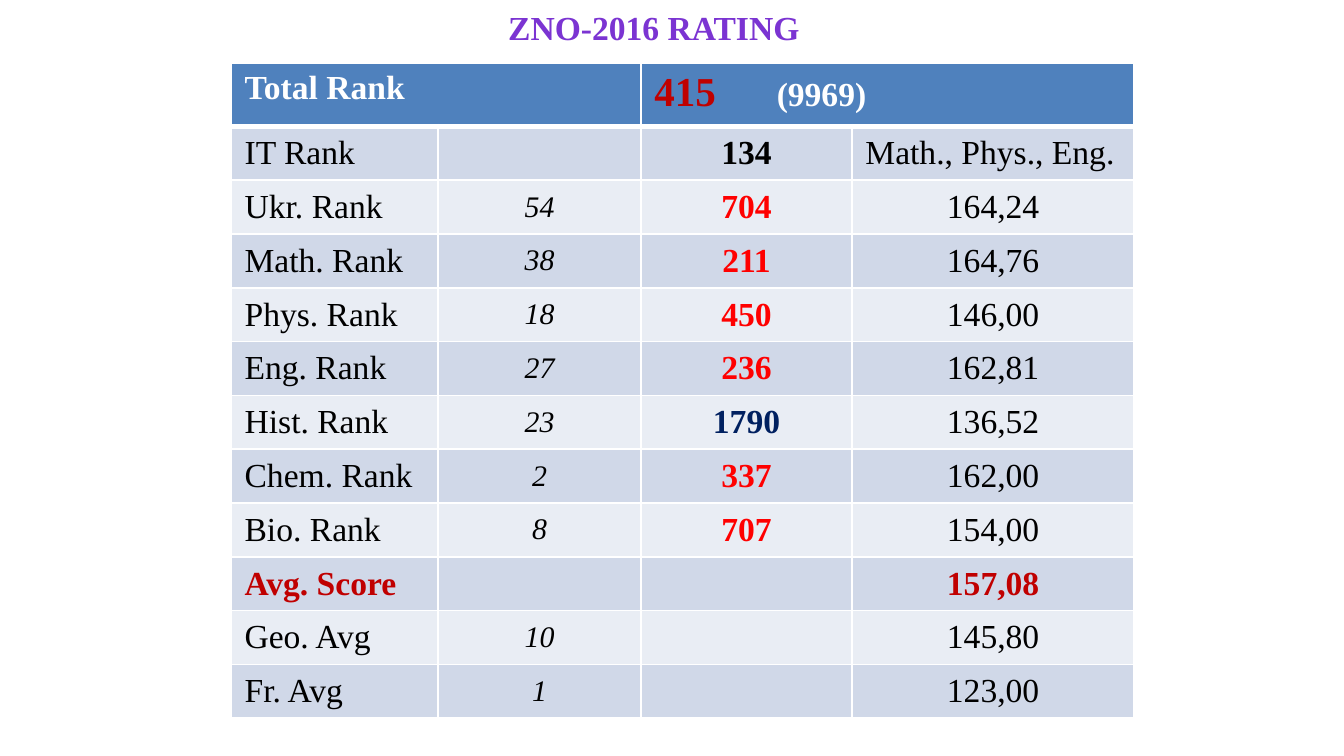
"""Build the ZNO-2016 rating slide with its table of ranks and scores."""
from lxml import etree
from pptx import Presentation, util as u
from pptx.dml.color import RGBColor
from pptx.enum import text
from pptx.oxml import ns

FONT = "Times New Roman"
WHITE, BLACK, RED, DARK_RED, NAVY = "FFFFFF", "000000", "FF0000", "C00000", "002060"
PURPLE, HEADER_FILL, BANDS = "7B34D2", "4F81BD", ("D0D8E8", "E9EDF4")
LEFT, CENTER = text.PP_ALIGN.LEFT, text.PP_ALIGN.CENTER

TITLE = "ZNO-2016 RATING"
HEADER = "Total Rank"
TOTAL = (("415", 22, DARK_RED), ("\t(9969)", 18, WHITE))
ROWS = [
    ("IT Rank", "", "134", "Math., Phys., Eng."),
    ("Ukr. Rank", "54", "704", "164,24"),
    ("Math. Rank", "38", "211", "164,76"),
    ("Phys. Rank", "18", "450", "146,00"),
    ("Eng. Rank", "27", "236", "162,81"),
    ("Hist. Rank", "23", "1790", "136,52"),
    ("Chem. Rank", "2", "337", "162,00"),
    ("Bio. Rank", "8", "707", "154,00"),
    ("Avg. Score", "", "", "157,08"),
    ("Geo. Avg", "10", "", "145,80"),
    ("Fr. Avg", "1", "", "123,00"),
]
RANK_COLORS = {"IT Rank": BLACK, "Hist. Rank": NAVY}
COLUMN_WIDTHS = (1.54, 1.51, 1.57, 2.1)
HEADER_HEIGHT, ROW_HEIGHT = 0.47, 0.4
TAB_STOP = 0.91


def color(value):
    """Return the colour for a hex string."""
    return RGBColor.from_string(value)


def style_font(font, size, font_color, bold=False, italic=False):
    """Set every property of a font."""
    font.name, font.size = FONT, u.Pt(size)
    font.bold, font.italic = bold, italic
    font.color.rgb = color(font_color)


def write(frame, words, alignment, *style):
    """Put one uniformly styled paragraph in a text frame."""
    paragraph = frame.paragraphs[0]
    paragraph.alignment = alignment
    style_font(paragraph.font, *style)
    if words:
        paragraph.add_run().text = words


def set_borders(cell, top, bottom):
    """Draw white borders of the given top and bottom widths around a cell."""
    properties = cell._tc.get_or_add_tcPr()
    widths = {"lnL": 1, "lnR": 1, "lnT": top, "lnB": bottom}
    for position, (side, width) in enumerate(widths.items()):
        line = etree.Element(ns.qn(f"a:{side}"), w=str(u.Pt(width)))
        fill = etree.SubElement(line, ns.qn("a:solidFill"))
        etree.SubElement(fill, ns.qn("a:srgbClr"), val=WHITE)
        properties.insert(position, line)


def fill_header(table):
    """Merge and write the two header cells."""
    for first in (0, 2):
        table.cell(0, first).merge(table.cell(0, first + 1))
    write(table.cell(0, 0).text_frame, HEADER, LEFT, 18, WHITE, True)
    paragraph = table.cell(0, 2).text_frame.paragraphs[0]
    tabs = etree.SubElement(paragraph._p.get_or_add_pPr(), ns.qn("a:tabLst"))
    etree.SubElement(tabs, ns.qn("a:tab"), pos=str(u.Inches(TAB_STOP)), algn="l")
    for words, size, font_color in TOTAL:
        run = paragraph.add_run()
        run.text = words
        style_font(run.font, size, font_color, True)


def fill_row(table, index, values):
    """Write one row of rank, count, place and score."""
    label = values[0]
    average = label == "Avg. Score"
    plain = (18, DARK_RED if average else BLACK, average)
    styles = (plain, (16, BLACK, False, True),
              (18, RANK_COLORS.get(label, RED), True), plain)
    for column, (words, style) in enumerate(zip(values, styles)):
        cell = table.cell(index, column)
        cell.vertical_anchor = text.MSO_ANCHOR.MIDDLE
        left = column == 0 or label == "IT Rank" and column == 3
        write(cell.text_frame, words, LEFT if left else CENTER, *style)


def main():
    """Build and save the slide."""
    presentation = Presentation()
    presentation.slide_width = u.Inches(10)
    presentation.slide_height = presentation.slide_width * 9 // 16
    slide = presentation.slides.add_slide(presentation.slide_layouts[6])

    title = slide.shapes.add_textbox(*map(u.Inches, (3.67, 0, 2.39, 0.4)))
    title.text_frame.word_wrap = False
    write(title.text_frame, TITLE, CENTER, 18, PURPLE, True)

    height = HEADER_HEIGHT + ROW_HEIGHT * len(ROWS)
    frame = slide.shapes.add_table(
        len(ROWS) + 1, len(COLUMN_WIDTHS),
        *map(u.Inches, (1.72, 0.47, sum(COLUMN_WIDTHS), height)))
    table = frame.table
    table.first_row = table.horz_banding = False
    for column, width in zip(table.columns, COLUMN_WIDTHS):
        column.width = u.Inches(width)
    for index, row in enumerate(table.rows):
        row.height = u.Inches(ROW_HEIGHT if index else HEADER_HEIGHT)
        for cell in row.cells:
            cell.fill.solid()
            cell.fill.fore_color.rgb = color(BANDS[(index - 1) % 2] if index else HEADER_FILL)
            set_borders(cell, 3 if index == 1 else 1, 1 if index else 3)

    fill_header(table)
    for index, values in enumerate(ROWS, 1):
        fill_row(table, index, values)
    presentation.save("out.pptx")


if __name__ == "__main__":
    main()
